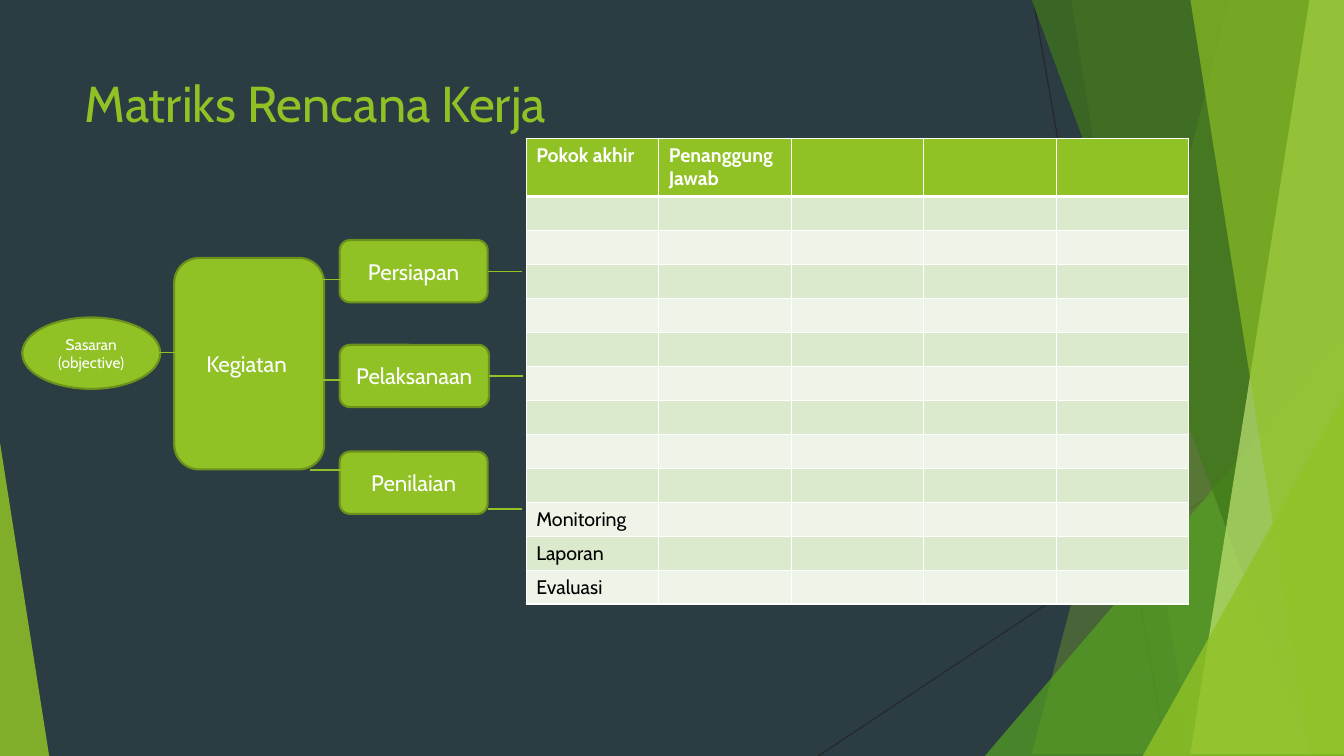
from lxml.etree import SubElement
from pptx import Presentation
from pptx.dml.color import RGBColor
from pptx.enum.shapes import MSO_CONNECTOR, MSO_SHAPE
from pptx.enum.text import MSO_ANCHOR, PP_ALIGN
from pptx.oxml.ns import qn
from pptx.util import Cm, Pt

# Content; all lengths in centimetres
WIDTH, HEIGHT = 33.87, 19.05
FONT = "Cabin"
GREEN, DARK_GREEN, WHITE = "90C226", "6B901C", "FFFFFF"
TITLE = "Matriks Rencana Kerja"

# Background lines: start x, start y, end x, end y
THIN_LINES = [(26.04, 0, 29.41, HEIGHT), (WIDTH, 10.24, 20.62, HEIGHT)]
# Panels reach the right edge: ("panel", top x, bottom x, colour, opacity)
# Triangles stand on the bottom: ("triangle", left, top, width, apex, colour, opacity)
DECORATION = [
    ("panel", 31.19, 25.5, GREEN, 30),
    ("panel", 26.67, 30.05, GREEN, 20),
    ("triangle", 24.82, 8.46, 9.05, 1, "54A021", 72),
    ("panel", 25.93, 32.79, "3F7819", 70),
    ("panel", 33.1, 30.28, "C0E474", 70),
    ("panel", 30.38, 33.48, GREEN, 65),
    ("triangle", 28.8, 9.98, 5.07, 1, GREEN, 80),
    ("triangle", 0, 11.15, 1.24, 0, GREEN, 85),
]

# Diagram: text, shape, left, top, width, height, text size
NODES = [
    ("Persiapan", MSO_SHAPE.ROUNDED_RECTANGLE, 8.56, 6.05, 3.73, 1.57, 16),
    ("Pelaksanaan", MSO_SHAPE.ROUNDED_RECTANGLE, 8.56, 8.69, 3.76, 1.57, 16),
    ("Penilaian", MSO_SHAPE.ROUNDED_RECTANGLE, 8.56, 11.38, 3.73, 1.57, 16),
    ("Kegiatan ", MSO_SHAPE.ROUNDED_RECTANGLE, 4.39, 6.5, 3.78, 5.33, 16),
    ("Sasaran (objective)", MSO_SHAPE.OVAL, 0.56, 8, 3.48, 1.8, 11),
]
LINK_LENGTH = 0.87
LINK_STARTS = [(3.78, 8.89), (8.13, 9.58), (7.77, 7.04), (7.8, 11.84), (12.29, 12.83)]
LINKED_TO_TABLE = ["Persiapan", "Pelaksanaan"]

# Table
TABLE_LEFT, TABLE_TOP, COLUMN_WIDTH = 13.26, 3.48, 3.34
HEADER_HEIGHT, ROW_HEIGHT = 1.47, 0.85
HEADERS = ["Pokok akhir", "Penanggung Jawab", "", "", ""]
FIRST_COLUMN = [""] * 9 + ["Monitoring", "Laporan", "Evaluasi"]
BANDS = ["DBE9CD", "EEF4E8"]


def color(value):
    return RGBColor.from_string(value)


def write(frame, text, size=14, fill=WHITE, bold=False, align=PP_ALIGN.LEFT):
    paragraph = frame.paragraphs[0]
    paragraph.alignment = align
    if not text:
        SubElement(paragraph._p, qn("a:endParaRPr"), sz=str(size * 100))
        return
    run = paragraph.add_run()
    run.text = text
    run.font.name, run.font.size, run.font.bold = FONT, Pt(size), bold
    run.font.color.rgb = color(fill)


def paint(shape, fill, line=None, opacity=100):
    shape.shadow.inherit = False
    shape.fill.solid()
    shape.fill.fore_color.rgb = color(fill)
    if opacity < 100:
        solid = shape._element.spPr.find(qn("a:solidFill"))
        SubElement(solid[0], qn("a:alpha"), val=str(opacity * 1000))
    if line:
        shape.line.color.rgb = color(line)
        shape.line.width = Pt(1.5)
    else:
        shape.line.fill.background()


def add_line(x1, y1, x2, y2, stroke=GREEN, width=1):
    line = slide.shapes.add_connector(MSO_CONNECTOR.STRAIGHT, Cm(x1), Cm(y1), Cm(x2), Cm(y2))
    line.line.color.rgb = color(stroke)
    line.line.width = Pt(width)
    SubElement(line._element.spPr, qn("a:effectLst"))
    return line


def format_cell(cell, text, fill, row):
    write(cell.text_frame, text, fill=WHITE if row == 0 else "000000", bold=row == 0)
    properties = cell._tc.get_or_add_tcPr()
    widths = {"L": 1, "R": 1, "T": 3 if row == 1 else 1, "B": 3 if row == 0 else 1}
    for side, width in widths.items():
        border = SubElement(properties, qn(f"a:ln{side}"), w=str(Pt(width)))
        SubElement(SubElement(border, qn("a:solidFill")), qn("a:srgbClr"), val=WHITE)
    cell.fill.solid()
    cell.fill.fore_color.rgb = color(fill)


presentation = Presentation()
presentation.slide_width, presentation.slide_height = Cm(WIDTH), Cm(HEIGHT)
slide = presentation.slides.add_slide(presentation.slide_layouts[5])
slide.background.fill.solid()
slide.background.fill.fore_color.rgb = color("2C3C43")

# Background decoration
for ends in THIN_LINES:
    add_line(*ends, stroke="262626", width=0.75)
for kind, *geometry, fill, opacity in DECORATION:
    if kind == "panel":
        top_x, bottom_x = geometry
        builder = slide.shapes.build_freeform(top_x, 0, scale=Cm(1))
        builder.add_line_segments([(WIDTH, 0), (WIDTH, HEIGHT), (bottom_x, HEIGHT)])
        shape = builder.convert_to_shape()
    else:
        left, top, width, apex = geometry
        shape = slide.shapes.add_shape(MSO_SHAPE.ISOSCELES_TRIANGLE, Cm(left), Cm(top),
                                       Cm(width), Cm(HEIGHT - top))
        shape.adjustments[0] = apex
    paint(shape, fill, opacity=opacity)

# Title
title = slide.shapes.title
title.left, title.top, title.width, title.height = Cm(1.88), Cm(1.7), Cm(23.88), Cm(3.66)
title.text_frame.vertical_anchor = MSO_ANCHOR.TOP
write(title.text_frame, TITLE, size=36, fill=GREEN)

# Diagram nodes
nodes = {}
for text, kind, left, top, width, height, size in NODES:
    node = slide.shapes.add_shape(kind, Cm(left), Cm(top), Cm(width), Cm(height))
    paint(node, GREEN, line=DARK_GREEN)
    node.text_frame.word_wrap = True
    node.text_frame.vertical_anchor = MSO_ANCHOR.MIDDLE
    write(node.text_frame, text, size=size, align=PP_ALIGN.CENTER)
    nodes[text] = node

# Work plan table
rows = [HEADERS] + [[label] + [""] * (len(HEADERS) - 1) for label in FIRST_COLUMN]
table = slide.shapes.add_table(
    len(rows), len(HEADERS), Cm(TABLE_LEFT), Cm(TABLE_TOP), Cm(COLUMN_WIDTH * len(HEADERS)),
    Cm(HEADER_HEIGHT + ROW_HEIGHT * len(FIRST_COLUMN))).table
for column in table.columns:
    column.width = Cm(COLUMN_WIDTH)
for r, texts in enumerate(rows):
    table.rows[r].height = Cm(ROW_HEIGHT if r else HEADER_HEIGHT)
    fill = BANDS[(r - 1) % 2] if r else GREEN
    for c, text in enumerate(texts):
        format_cell(table.cell(r, c), text, fill, r)

# Diagram links
for x, y in LINK_STARTS:
    add_line(x, y, x + LINK_LENGTH, y)
for name in LINKED_TO_TABLE:
    node = nodes[name]
    x, y = (node.left + node.width) / Cm(1), (node.top + node.height / 2) / Cm(1)
    add_line(x, y, x + LINK_LENGTH, y).begin_connect(node, 3)

presentation.save("out.pptx")
